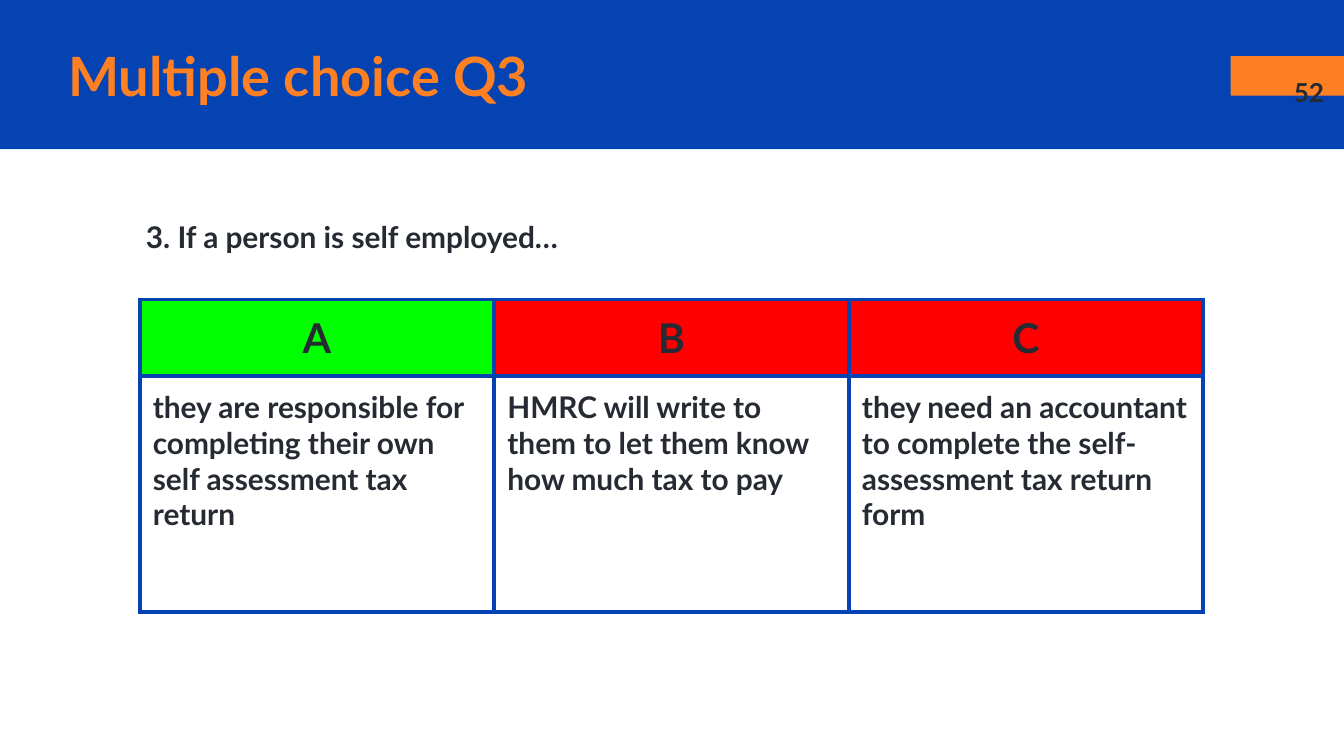
from lxml import etree
from pptx import Presentation
from pptx import util as u
from pptx.dml.color import RGBColor
from pptx.enum import shapes, text
from pptx.oxml import ns

COLOURS = {
    "blue": "0543B3",
    "orange": "FF8022",
    "ink": "262A33",
    "right": "00FF00",
    "wrong": "FF0000",
}


class QuizSlide:
    font = "Lato"
    inset = u.Cm(0.25)
    border = u.Pt(2.25)

    def __init__(self, slide):
        self.slide = slide

    def paint(self, fill, colour):
        fill.solid()
        fill.fore_color.rgb = RGBColor.from_string(COLOURS[colour])

    def add_words(self, paragraph, words, size, colour="ink",
                  align=text.PP_ALIGN.LEFT):
        paragraph.alignment = align
        run = paragraph.add_run()
        run.text = words
        run.font.name = self.font
        run.font.size = u.Pt(size)
        run.font.bold = True
        run.font.color.rgb = RGBColor.from_string(COLOURS[colour])

    def pad(self, holder):
        holder.margin_left = holder.margin_right = self.inset
        holder.margin_top = holder.margin_bottom = self.inset

    def bar(self, left, top, width, height, colour):
        bar = self.slide.shapes.add_shape(
            shapes.MSO_SHAPE.RECTANGLE,
            u.Cm(left), u.Cm(top), u.Cm(width), u.Cm(height))
        bar.shadow.inherit = False
        self.paint(bar.fill, colour)
        bar.line.fill.background()

    def label(self, left, top, width, height, words, size,
              anchor=text.MSO_ANCHOR.MIDDLE, **style):
        frame = self.slide.shapes.add_textbox(
            u.Cm(left), u.Cm(top), u.Cm(width), u.Cm(height)).text_frame
        frame.word_wrap = True
        frame.vertical_anchor = anchor
        self.pad(frame)
        self.add_words(frame.paragraphs[0], words, size, **style)

    def outline(self, cell):
        """Draw all four borders; they must come before the fill in the XML."""
        properties = cell._tc.get_or_add_tcPr()
        for side in ("a:lnL", "a:lnR", "a:lnT", "a:lnB"):
            line = etree.SubElement(properties, ns.qn(side), w=str(self.border))
            fill = etree.SubElement(line, ns.qn("a:solidFill"))
            etree.SubElement(fill, ns.qn("a:srgbClr"), val=COLOURS["blue"])

    def answers(self, left, top, column_width, row_heights, choices):
        """Place choices, given as (letter, mark colour, answer), in columns."""
        table = self.slide.shapes.add_table(
            2, len(choices), u.Cm(left), u.Cm(top),
            u.Cm(column_width * len(choices)), u.Cm(sum(row_heights))).table
        table.first_row = table.horz_banding = False
        for row, height in zip(table.rows, row_heights):
            row.height = u.Cm(height)
        for column, (letter, mark, answer) in enumerate(choices):
            table.columns[column].width = u.Cm(column_width)
            head, body = table.cell(0, column), table.cell(1, column)
            for cell in (head, body):
                self.pad(cell)
                self.outline(cell)
            self.paint(head.fill, mark)
            body.fill.background()
            self.add_words(head.text_frame.paragraphs[0], letter, 22,
                           align=text.PP_ALIGN.CENTER)
            self.add_words(body.text_frame.paragraphs[0], answer, 16)


def main():
    deck = Presentation()
    deck.slide_width, deck.slide_height = u.Cm(25.4), u.Cm(14.29)
    quiz = QuizSlide(deck.slides.add_slide(deck.slide_layouts[6]))

    quiz.bar(0, 0, 25.4, 2.82, "blue")
    quiz.bar(23.26, 1.06, 2.14, 0.75, "orange")
    quiz.label(1.04, 0.71, 22.2, 1.42, "Multiple choice Q3", 29, colour="orange")
    quiz.label(24.08, 1.42, 1.32, 0.64, "52", 14, align=text.PP_ALIGN.CENTER)
    quiz.answers(2.64, 5.66, 6.7, (1.45, 4.46), [
        ("A", "right", "they are responsible for completing their own "
                       "self assessment tax return"),
        ("B", "wrong", "HMRC will write to them to let them know "
                       "how much tax to pay"),
        ("C", "wrong", "they need an accountant to complete the "
                       "self-assessment tax return form"),
    ])
    quiz.label(2.51, 3.89, 21.29, 1.19, "3. If a person is self employed…", 16,
               anchor=text.MSO_ANCHOR.TOP)

    deck.save("out.pptx")


if __name__ == "__main__":
    main()
